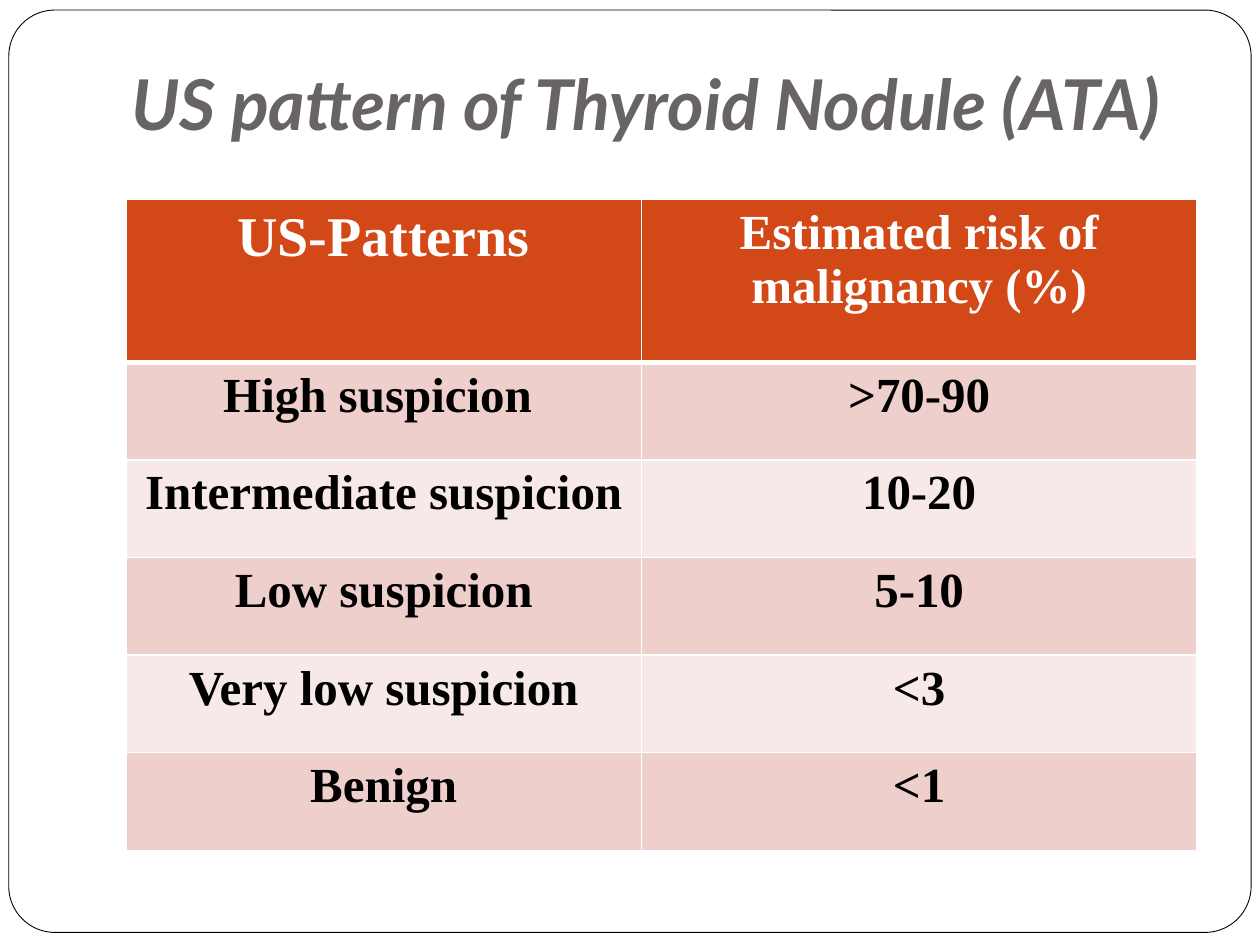
from lxml.etree import SubElement
from pptx import Presentation
from pptx.dml.color import RGBColor
from pptx.enum.shapes import MSO_SHAPE as Shape
from pptx.enum.text import MSO_ANCHOR as Anchor, PP_ALIGN as Align
from pptx.oxml.ns import qn
from pptx.util import Inches, Pt

WHITE = RGBColor(0xFF, 0xFF, 0xFF)
BLACK = RGBColor(0x00, 0x00, 0x00)
GRAY = RGBColor(0x69, 0x64, 0x64)
ORANGE = RGBColor(0xD3, 0x48, 0x17)
ROSE = RGBColor(0xEF, 0xCF, 0xCC)
PALE_ROSE = RGBColor(0xF7, 0xE9, 0xE8)

COLUMNS, ROWS = 20, 15
RISKS = [
    ("US-Patterns", "Estimated risk of malignancy (%)"),
    ("High suspicion ", ">70-90"),
    ("Intermediate suspicion", "10-20"),
    ("Low suspicion", "5-10"),
    ("Very low suspicion", "<3"),
    ("Benign", "<1"),
]


class RiskSlide:
    """Draws styled elements on one page, placed in grid columns and rows."""

    title_font = "Lato"
    table_font = "Times New Roman"

    def __init__(self, deck):
        self.page = deck.slides.add_slide(deck.slide_layouts[6])
        self.column = deck.slide_width / COLUMNS
        self.row = deck.slide_height / ROWS

    def area(self, left, top, width, height):
        return (round(left * self.column), round(top * self.row),
                round(width * self.column), round(height * self.row))

    def set_text(self, frame, text, font, size, color, italic=False):
        frame.text = text
        para = frame.paragraphs[0]
        para.alignment = Align.CENTER
        for span in para.runs:
            span.font.name = font
            span.font.size = Pt(size)
            span.font.bold = True
            span.font.italic = italic
            span.font.color.rgb = color

    def frame(self, *place):
        border = self.page.shapes.add_shape(Shape.ROUNDED_RECTANGLE, *self.area(*place))
        border.adjustments[0] = 0.05
        border.shadow.inherit = False
        border.fill.solid()
        border.fill.fore_color.rgb = WHITE
        border.line.color.rgb = BLACK
        border.line.width = Pt(0.5)

    def title(self, text, *place):
        box = self.page.shapes.add_textbox(*self.area(*place))
        box.text_frame.word_wrap = True
        box.text_frame.vertical_anchor = Anchor.BOTTOM
        box.text_frame.margin_bottom = Inches(0.1)
        self.set_text(box.text_frame, text, self.title_font, 40, GRAY, italic=True)

    def cell_borders(self, cell, bottom, top):
        properties = cell._tc.get_or_add_tcPr()
        for side, width in (("L", 1), ("R", 1), ("T", top), ("B", bottom)):
            line = SubElement(properties, qn(f"a:ln{side}"), w=str(Pt(width)))
            fill = SubElement(line, qn("a:solidFill"))
            SubElement(fill, qn("a:srgbClr"), val=str(WHITE))

    def table(self, records, widths, heights, left, top):
        place = self.area(left, top, sum(widths), sum(heights))
        table = self.page.shapes.add_table(len(records), len(widths), *place).table
        for column, width in zip(table.columns, widths):
            column.width = round(width * self.column)
        for index, (row, height, record) in enumerate(zip(table.rows, heights, records)):
            row.height = round(height * self.row)
            header = index == 0
            fill = ORANGE if header else (PALE_ROSE, ROSE)[index % 2]
            for number, (cell, text) in enumerate(zip(row.cells, record)):
                cell.margin_left = cell.margin_right = Inches(0.09)
                size = 32 if header and number == 0 else 28
                self.set_text(cell.text_frame, text, self.table_font, size,
                              WHITE if header else BLACK)
                self.cell_borders(cell, 3 if header else 1, 3 if index == 1 else 1)
                cell.fill.solid()
                cell.fill.fore_color.rgb = fill


def main():
    deck = Presentation()
    deck.slide_width, deck.slide_height = Inches(10), Inches(7.5)
    slide = RiskSlide(deck)
    slide.frame(0.14, 0.16, 19.72, 14.64)
    slide.title("US pattern of Thyroid Nodule (ATA)", 1, 0.6, 18.5, 1.9)
    slide.table(RISKS, [8.18, 8.82], [2.58] + [1.55] * 5, 2, 3.17)
    deck.save("out.pptx")


if __name__ == "__main__":
    main()
